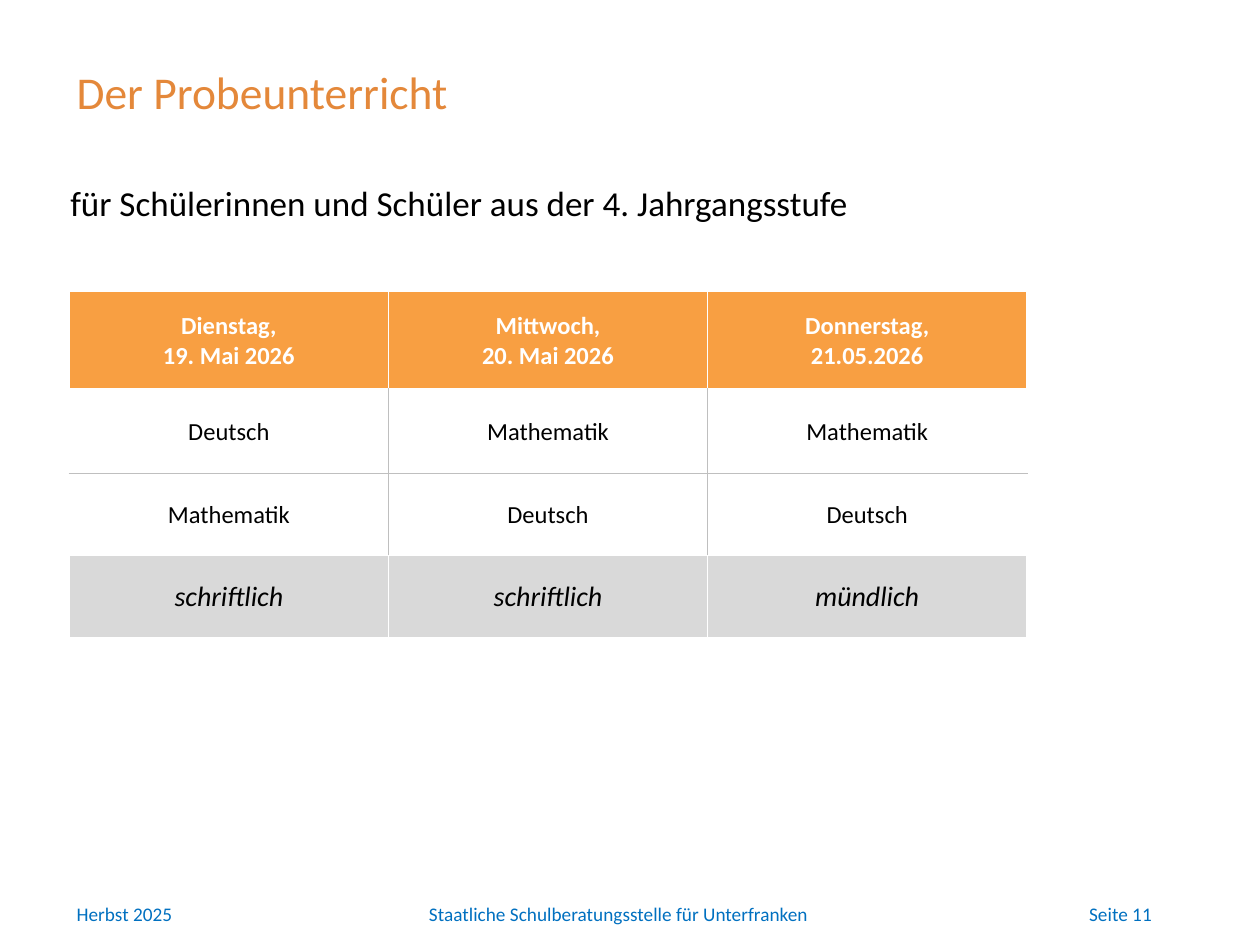
from lxml import etree
from pptx import Presentation
from pptx import util as u
from pptx.dml import color
from pptx.enum import text
from pptx.oxml import ns

WHITE, GREY, BLUE = "FFFFFF", "BFBFBF", "0070C0"
LEFT, MID, RIGHT = text.PP_ALIGN.LEFT, text.PP_ALIGN.CENTER, text.PP_ALIGN.RIGHT
TOP, HALF = text.MSO_ANCHOR.TOP, text.MSO_ANCHOR.MIDDLE


def rgb(code):
    return color.RGBColor.from_string(code)


def write(frame, lines, size, hue, align=LEFT, space=1.0, bold=False, slant=False):
    for i, line in enumerate(lines):
        par = frame.paragraphs[0] if i == 0 else frame.add_paragraph()
        par.alignment = align
        par.line_spacing = space
        run = par.add_run()
        run.text = line
        font = run.font
        font.name, font.size = "Calibri", u.Pt(size)
        font.bold, font.italic = bold, slant
        font.color.rgb = rgb(hue)


deck = Presentation()
deck.slide_width, deck.slide_height = u.Inches(10), u.Inches(7.5)
page = deck.slides.add_slide(deck.slide_layouts[6])

# Title, subtitle and footer: left, top, width, height, words, size, colour, align, spacing, anchor
foot, tall = 7.11, 0.29
boxes = [
    (0.51, 0.29, 7.59, 0.92, "Der Probeunterricht", 26, "E4883A", LEFT, 0.9, HALF),
    (0.46, 1.43, 8.8, 0.69, "für Schülerinnen und Schüler aus der 4. Jahrgangsstufe",
     20, "000000", LEFT, 0.9, TOP),
    (0.51, foot, 2.58, tall, "Herbst 2025", 11, BLUE, LEFT, 1.0, TOP),
    (2.91, foot, 4, tall, "Staatliche Schulberatungsstelle für Unterfranken",
     11, BLUE, MID, 1.0, TOP),
    (7.95, foot, 1.29, tall, "Seite 11", 11, BLUE, RIGHT, 1.0, TOP),
]
for x, y, w, h, words, size, hue, align, space, anchor in boxes:
    frame = page.shapes.add_textbox(*map(u.Inches, (x, y, w, h))).text_frame
    frame.word_wrap = True
    frame.vertical_anchor = anchor
    write(frame, [words], size, hue, align, space)

# Timetable: one column per day, rows of lines with their own style
rows = [
    [["Dienstag,", "19. Mai 2026"], ["Mittwoch,", "20. Mai 2026"],
     ["Donnerstag,", "21.05.2026"]],
    [["Deutsch"], ["Mathematik"], ["Mathematik"]],
    [["Mathematik"], ["Deutsch"], ["Deutsch"]],
    [["schriftlich"], ["schriftlich"], ["mündlich"]],
]
fills = ["F89F42", WHITE, WHITE, "D9D9D9"]
highs = [0.79, 0.66, 0.65, 0.65]
area = [u.Inches(n) for n in (0.55, 2.31, 7.6, sum(highs))]
grid = page.shapes.add_table(4, 3, *area).table
for col in grid.columns:
    col.width = u.Inches(7.6 / 3)

for r, row in enumerate(rows):
    grid.rows[r].height = u.Inches(highs[r])
    head, last = r == 0, r == 3
    body = not head and not last
    for c, lines in enumerate(row):
        cell = grid.cell(r, c)
        cell.vertical_anchor = HALF
        write(cell.text_frame, lines, 16 if last else 14, WHITE if head else "000000",
              MID, bold=head, slant=last)

        # Grey hairlines inside the body, white lines elsewhere
        inner = {"L": body and c > 0, "R": body and c < 2, "T": r == 2, "B": r == 1}
        for side, thin in inner.items():
            wide = 0.5 if thin else 3 if head and side == "B" else 1
            line = etree.SubElement(cell._tc.get_or_add_tcPr(), ns.qn("a:ln" + side),
                                    w=str(u.Pt(wide)))
            paint = etree.SubElement(line, ns.qn("a:solidFill"))
            etree.SubElement(paint, ns.qn("a:srgbClr"), val=GREY if thin else WHITE)
        cell.fill.solid()
        cell.fill.fore_color.rgb = rgb(fills[r])

deck.save("out.pptx")
